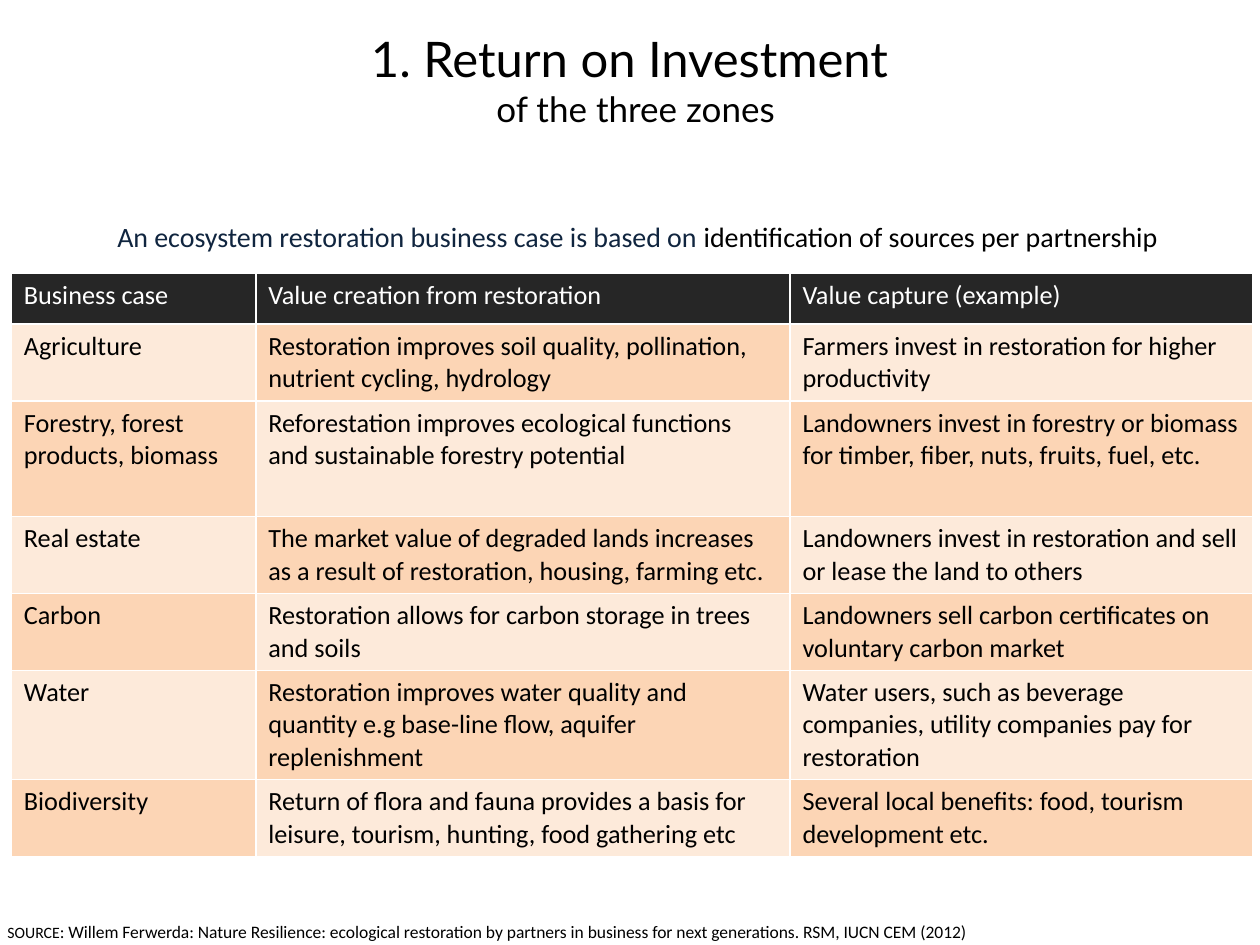
from pptx import Presentation
from pptx.dml.color import RGBColor
from pptx.enum.text import MSO_ANCHOR, MSO_AUTO_SIZE, PP_ALIGN
from pptx.util import Inches, Pt

BLACK, WHITE, NAVY, HEADER = "000000", "FFFFFF", "10253F", "262626"
BANDS = ("FDEADA", "FCD5B5")
COL_WIDTHS = (1.94, 4.24, 3.67)
LINE, CELL_PAD, SPARE_LINE = 0.255, 0.1, 0.31
ROWS = [
    ("Business case", "Value creation from restoration", "Value capture (example)"),
    ("Agriculture",
     "Restoration improves soil quality, pollination, nutrient cycling, hydrology",
     "Farmers invest in restoration for higher productivity"),
    ("Forestry, forest products, biomass",
     "Reforestation improves ecological functions and sustainable forestry potential",
     "Landowners invest in forestry or biomass for timber, fiber, nuts, fruits, fuel, etc."),
    ("Real estate",
     "The market value of degraded lands increases as a result of restoration, housing, farming etc.",
     "Landowners invest in restoration and sell or lease the land to others"),
    ("Carbon",
     "Restoration allows for carbon storage in trees and soils",
     "Landowners sell carbon certificates on voluntary carbon market"),
    ("Water",
     "Restoration improves water quality and quantity e.g base-line flow, aquifer replenishment",
     "Water users, such as beverage companies, utility companies pay for restoration"),
    ("Biodiversity",
     "Return of flora and fauna provides a basis for leisure, tourism, hunting, food gathering etc",
     "Several local benefits: food, tourism development etc."),
]
ROW_HEIGHTS = [0.4] + [n * LINE + CELL_PAD for n in (2, 2, 2, 2, 3, 2)]
ROW_HEIGHTS[2] += SPARE_LINE


def rgb(value):
    """Turn a hex string into a colour."""
    return RGBColor.from_string(value)


def add_run(p, text, color=BLACK, **fmt):
    """Add a run to a paragraph with the given font values."""
    r = p.add_run()
    r.text = text
    for name, value in fmt.items():
        setattr(r.font, name, value)
    r.font.color.rgb = rgb(color)


def format_frame(tf, **fmt):
    """Set wrapping and the given values on a text frame."""
    for name, value in {"word_wrap": True, "auto_size": MSO_AUTO_SIZE.NONE, **fmt}.items():
        setattr(tf, name, value)


def add_title(slide, box):
    """Place the two-line title in the title placeholder."""
    sp = slide.shapes.title
    sp.left, sp.top, sp.width, sp.height = map(Inches, box)
    tf = sp.text_frame
    format_frame(tf, vertical_anchor=MSO_ANCHOR.MIDDLE)
    lines = (("1. Return on Investment ", 28), ("of the three zones", 20))
    for i, (text, size) in enumerate(lines):
        p = tf.add_paragraph() if i else tf.paragraphs[0]
        p.alignment = PP_ALIGN.CENTER
        add_run(p, text, name="Lato", size=Pt(size))


def add_line(slide, box, runs, align, anchor):
    """Place a single line of mixed runs in a box without margins."""
    tf = slide.shapes.add_textbox(*map(Inches, box)).text_frame
    margins = dict.fromkeys(("margin_left", "margin_top", "margin_right", "margin_bottom"), 0)
    format_frame(tf, vertical_anchor=anchor, **margins)
    p = tf.paragraphs[0]
    p.alignment = align
    for text, size, color in runs:
        add_run(p, text, color, name="Calibri", size=Pt(size))


def add_cases(slide, box):
    """Place the business case table with its checkered fills."""
    table = slide.shapes.add_table(len(ROWS), len(COL_WIDTHS), *map(Inches, box)).table
    for column, width in zip(table.columns, COL_WIDTHS):
        column.width = Inches(width)
    for i, (texts, height) in enumerate(zip(ROWS, ROW_HEIGHTS)):
        table.rows[i].height = Inches(height)
        for j, text in enumerate(texts):
            cell = table.cell(i, j)
            cell.fill.solid()
            cell.fill.fore_color.rgb = rgb(BANDS[(i + j + 1) % 2] if i else HEADER)
            add_run(cell.text_frame.paragraphs[0], text, BLACK if i else WHITE,
                    name="Calibri", size=Pt(15), bold=False)


def main():
    """Build and save the slide."""
    prs = Presentation()
    prs.slide_width, prs.slide_height = Inches(10), Inches(7.5)
    slide = prs.slides.add_slide(prs.slide_layouts[5])
    add_title(slide, (0, 0, 10.09, 1.25))
    add_line(slide, (0.13, 1.74, 9.86, 0.35),
             [("An ecosystem restoration business case is based on ", 16, NAVY),
              ("identification of sources per partnership", 16, BLACK)],
             PP_ALIGN.CENTER, MSO_ANCHOR.TOP)
    add_cases(slide, (0.09, 2.17, sum(COL_WIDTHS), sum(ROW_HEIGHTS)))
    add_line(slide, (0.06, 7.31, 9.94, 0.17),
             [("SOURCE", 9, BLACK),
              (": Willem Ferwerda: Nature Resilience: ecological restoration by partners in "
               "business for next generations. RSM, IUCN CEM (2012)", 10, BLACK)],
             PP_ALIGN.LEFT, MSO_ANCHOR.MIDDLE)
    prs.save("out.pptx")


if __name__ == "__main__":
    main()
